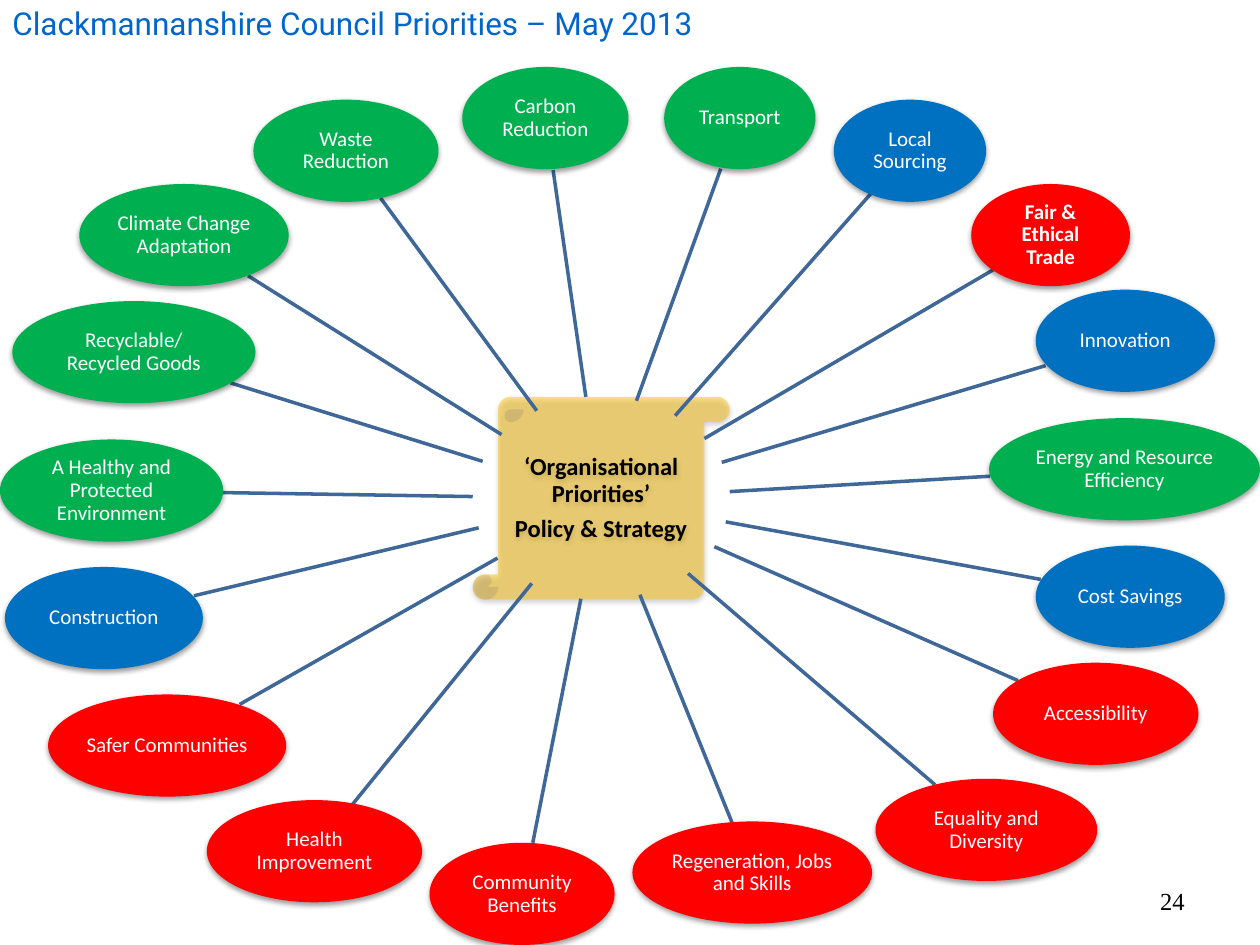
from dataclasses import dataclass

from lxml import etree
from pptx import Presentation
from pptx import util as u
from pptx.dml.color import RGBColor
from pptx.enum import shapes, text
from pptx.oxml import ns

INK = {
    "green": "00B050", "blue": "0070C0", "red": "FF0000", "gold": "FFC000",
    "line": "3F6797", "title": "0066CC", "black": "000000", "white": "FFFFFF",
}
OVAL = 2.06


@dataclass
class Font:
    """Look of a run of text."""
    name: str
    size: float
    ink: str
    bold: bool = False


@dataclass
class Goal:
    """One priority: its oval, and the inner and outer end of its spoke."""
    label: str
    ink: str
    left: float
    top: float
    width: float
    start: tuple[float, float]
    end: tuple[float, float]
    bold: bool = False


GOALS = [
    Goal("Carbon Reduction", "green", 9.32, 1.35, 3.35, (11.81, 8), (11.15, 3.43)),
    Goal("Recyclable/ Recycled Goods", "green", 0.25, 6.07, 4.9, (9.73, 9.3), (4.65, 7.72)),
    Goal("Fair & Ethical Trade", "red", 19.58, 3.71, 3.2, (14.2, 8.84), (20.02, 5.44), True),
    Goal("Local Sourcing", "blue", 16.81, 2.01, 3.07, (13.61, 8.38), (17.55, 3.91)),
    Goal("Innovation", "blue", 20.88, 5.84, 3.61, (14.55, 9.32), (21.08, 7.37)),
    Goal("Health Improvement", "red", 4.17, 16.13, 4.34, (10.72, 11.76), (7.11, 16.21)),
    Goal("Equality and Diversity", "red", 17.65, 15.7, 4.47, (13.87, 11.56), (18.85, 15.82)),
    Goal("Accessibility", "red", 20.02, 13.36, 4.14, (14.4, 11.02), (20.52, 13.72)),
    Goal("Waste Reduction", "green", 5.11, 2.01, 3.73, (10.82, 8.28), (7.67, 3.99)),
    Goal("Community Benefits", "red", 8.66, 16.99, 3.73, (11.71, 12.07), (10.74, 16.99)),
    Goal("Construction", "blue", 0.1, 11.43, 3.99, (9.65, 10.64), (3.91, 12.01)),
    Goal("Energy and Resource Efficiency", "green", 19.94, 8.43, 5.46, (14.71, 9.91), (19.96, 9.6)),
    Goal("A Healthy and Protected Environment", "green", 0, 8.86, 4.5, (9.53, 10.01), (4.5, 9.93)),
    Goal("Regeneration, Jobs and Skills", "red", 12.75, 16.56, 4.83, (12.9, 11.99), (14.76, 16.59)),
    Goal("Cost Savings", "blue", 20.88, 11, 3.81, (14.63, 10.52), (20.98, 11.68)),
    Goal("Safer Communities", "red", 0.97, 14, 4.8, (10.03, 11.25), (4.83, 14.2)),
    Goal("Transport", "green", 13.39, 1.35, 3.05, (12.83, 8.08), (14.53, 3.4)),
    Goal("Climate Change Adaptation", "green", 1.6, 3.71, 4.22, (10.11, 8.76), (5, 5.56)),
]


def tint(ink: str) -> RGBColor:
    """Return a named colour."""
    return RGBColor.from_string(INK[ink])


def child(node, tag: str, **attrs: str):
    """Append a drawing element and return it."""
    return etree.SubElement(node, ns.qn(tag), attrs)


def write(para, words: str, font: Font) -> None:
    """Add one run to a paragraph."""
    run = para.add_run()
    run.text = words
    run.font.name, run.font.size = font.name, u.Pt(font.size)
    run.font.bold = font.bold
    run.font.color.rgb = tint(font.ink)


def shade(shape) -> None:
    """Give a shape a soft shadow below it."""
    shape.shadow.inherit = False
    glow = child(
        shape._element.spPr.find(ns.qn("a:effectLst")), "a:outerShdw",
        blurRad=str(u.Pt(3.1)), dist=str(u.Pt(1.6)), dir="5400000", rotWithShape="0",
    )
    child(child(glow, "a:srgbClr", val=INK["black"]), "a:alpha", val="38000")


def block(slide, kind, box: tuple, ink: str, lines: list[str], font: Font):
    """Draw a filled, shadowed shape with centred text."""
    shape = slide.shapes.add_shape(kind, *map(u.Cm, box))
    shape.fill.solid()
    shape.fill.fore_color.rgb = tint(ink)
    shape.line.fill.background()
    shade(shape)
    frame = shape.text_frame
    frame.word_wrap = True
    frame.vertical_anchor = text.MSO_ANCHOR.MIDDLE
    frame.margin_left = frame.margin_right = u.Cm(0.03)
    frame.margin_top = frame.margin_bottom = u.Cm(0.03)
    for i, line in enumerate(lines):
        para = frame.add_paragraph() if i else frame.paragraphs[0]
        para.alignment = text.PP_ALIGN.CENTER
        para.line_spacing = 0.9
        para.space_after = u.Pt(font.size * 0.35)
        write(para, line, font)
    return shape


def scroll(slide) -> None:
    """Draw the see-through scroll in the middle."""
    shape = block(
        slide, shapes.MSO_SHAPE.VERTICAL_SCROLL, (9.53, 8, 5.18, 4.09), "gold",
        ["‘Organisational Priorities’", "Policy & Strategy"],
        Font("Calibri", 14, "black", True),
    )
    shape.text_frame.margin_bottom = u.Cm(0.28)
    fill = shape._element.spPr.find(ns.qn("a:solidFill"))
    child(fill[0], "a:alpha", val="46000")


def spoke(slide, goal: Goal) -> None:
    """Draw the line from the scroll to an oval."""
    ends = map(u.Cm, goal.start + goal.end)
    line = slide.shapes.add_connector(shapes.MSO_CONNECTOR.STRAIGHT, *ends)
    line.line.color.rgb = tint("line")
    line.line.width = u.Pt(2)
    child(line._element.spPr, "a:effectLst")


def label(slide, box: tuple, words: str, font: Font, side, anchor) -> None:
    """Add a one-line text box."""
    frame = slide.shapes.add_textbox(*map(u.Cm, box)).text_frame
    frame.word_wrap = True
    frame.vertical_anchor = anchor
    frame.paragraphs[0].alignment = side
    write(frame.paragraphs[0], words, font)


def main() -> None:
    """Build the slide and save it."""
    deck = Presentation()
    deck.slide_width, deck.slide_height = u.Cm(25.4), u.Cm(19.05)
    slide = deck.slides.add_slide(deck.slide_layouts[6])
    label(slide, (18.21, 17.65, 5.92, 1.02), "24", Font("Times New Roman", 14, "black"),
          text.PP_ALIGN.RIGHT, text.MSO_ANCHOR.MIDDLE)
    scroll(slide)
    for goal in GOALS:
        spoke(slide, goal)
        block(slide, shapes.MSO_SHAPE.OVAL, (goal.left, goal.top, goal.width, OVAL),
              goal.ink, [goal.label], Font("Calibri", 12, "white", goal.bold))
    label(slide, (0, -0.05, 15.82, 1.02), "Clackmannanshire Council Priorities – May 2013",
          Font("Roboto", 18, "title"), text.PP_ALIGN.LEFT, text.MSO_ANCHOR.TOP)
    deck.save("out.pptx")


if __name__ == "__main__":
    main()
